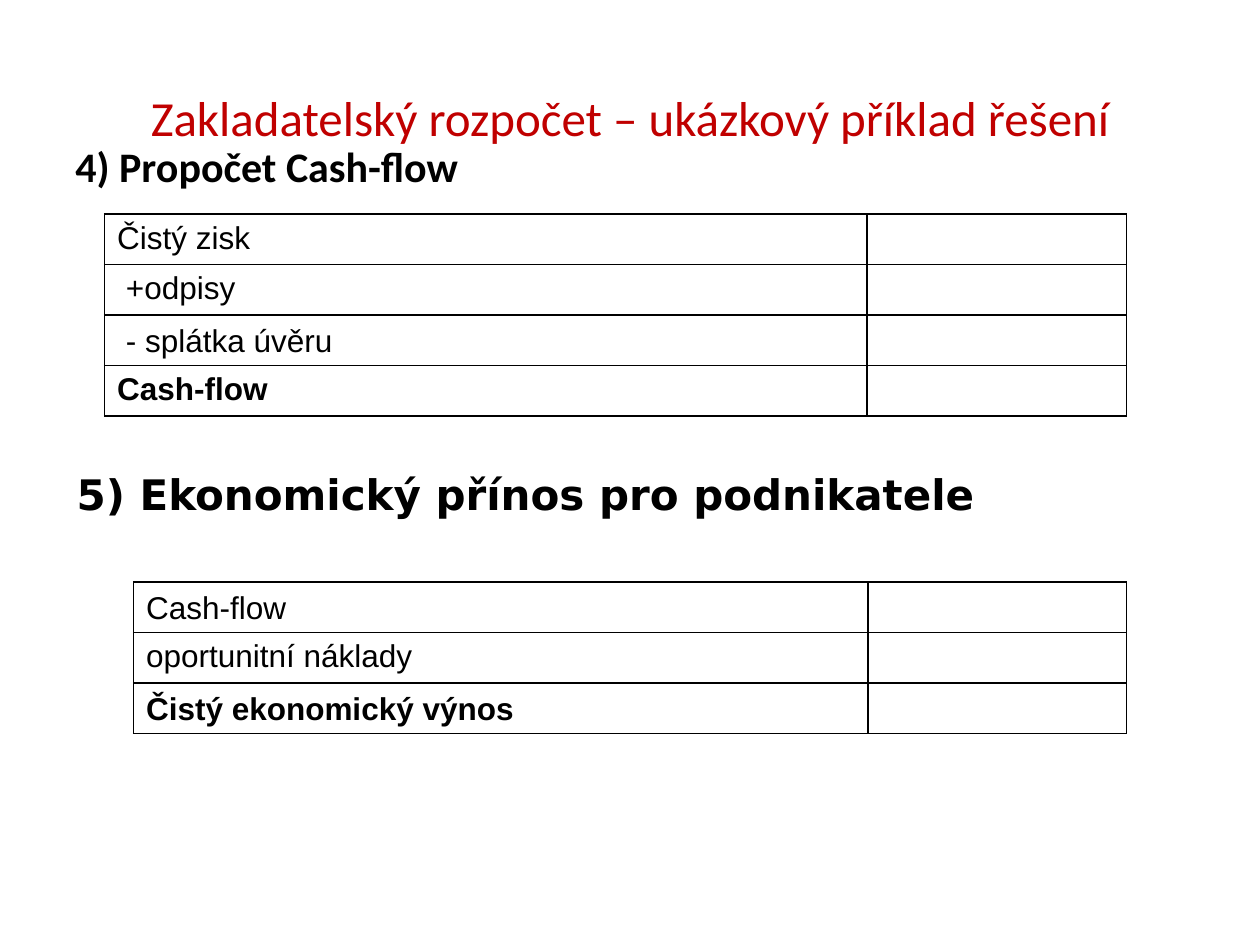
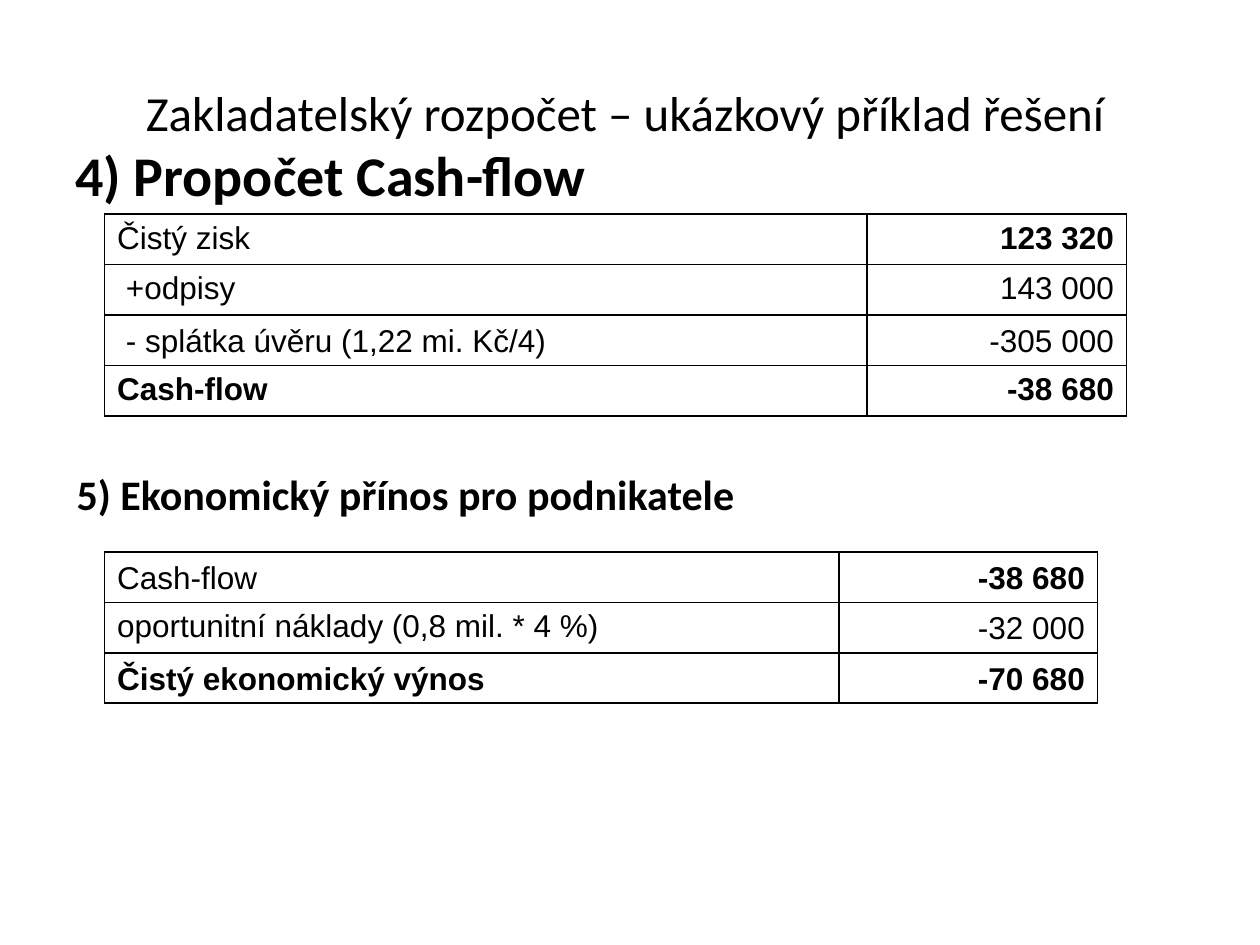
import pptx
import pptx.util
import pptx.dml.color
import pptx.enum.text
import pptx.oxml.ns
from lxml import etree

Inches = pptx.util.Inches
Align = pptx.enum.text.PP_ALIGN
Anchor = pptx.enum.text.MSO_ANCHOR

BLACK = "000000"
RED = "C00000"
ROW = 0.4
TITLE = "Zakladatelský rozpočet – ukázkový příklad řešení"
CASH = "4) Propočet Cash-flow"
GAIN = "5) Ekonomický přínos pro podnikatele"
CASH_COLS = (6.05, 2.06)
GAIN_COLS = (5.83, 2.05)
CASH_LOW = {(2, 0), (2, 1)}
GAIN_LOW = {(0, 0), (2, 0), (0, 1), (1, 1), (2, 1)}


def paint(code):
    return pptx.dml.color.RGBColor.from_string(code)


def put(frame, text, size=18, face="Arial", color=BLACK, bold=False, align=Align.LEFT):
    """Write one formatted paragraph into a text frame."""
    para = frame.paragraphs[0]
    para.alignment = align
    run = para.add_run()
    run.text = text
    run.font.size = pptx.util.Pt(size)
    run.font.name = face
    run.font.bold = bold
    run.font.color.rgb = paint(color)


def add_text(slide, box, text, anchor=Anchor.TOP, **style):
    frame = slide.shapes.add_textbox(*map(Inches, box)).text_frame
    frame.word_wrap = True
    frame.vertical_anchor = anchor
    put(frame, text, **style)


def add_title(slide, box, color):
    add_text(slide, box, TITLE, Anchor.MIDDLE, size=28, face="Calibri",
             color=color, align=Align.CENTER)


def add_heads(slide, size, face):
    """Add both section headings; size is for the first, face for the second."""
    add_text(slide, (0.5, 1.07, 4.53, 5.63), CASH, size=size, face="Calibri", bold=True)
    add_text(slide, (0.51, 3.67, 9.07, 0.71), GAIN, size=24, face=face, bold=True)


def frame_cell(cell):
    """Give a cell thin black borders and no fill."""
    props = cell._tc.get_or_add_tcPr()
    for side in ("lnL", "lnR", "lnT", "lnB"):
        line = etree.SubElement(props, pptx.oxml.ns.qn("a:" + side), w="12700")
        fill = etree.SubElement(line, pptx.oxml.ns.qn("a:solidFill"))
        etree.SubElement(fill, pptx.oxml.ns.qn("a:srgbClr"), val=BLACK)
    cell.fill.background()


def add_sums(slide, left, top, cols, rows, low):
    """Add a table of labels and sums; low lists the bottom-anchored cells."""
    table = slide.shapes.add_table(
        len(rows), len(cols), Inches(left), Inches(top),
        Inches(sum(cols)), Inches(ROW * len(rows))).table
    table.first_row = table.horz_banding = False
    for col, width in zip(table.columns, cols):
        col.width = Inches(width)
    last = len(rows) - 1
    for r, pair in enumerate(rows):
        table.rows[r].height = Inches(ROW)
        for c, text in enumerate(pair):
            cell = table.cell(r, c)
            frame_cell(cell)
            cell.vertical_anchor = Anchor.BOTTOM if (r, c) in low else Anchor.TOP
            if text.startswith(("+", "- ")):
                cell.margin_left = Inches(0.17)
            put(cell.text_frame, text, bold=r == last or (r == 0 and c == 1),
                align=Align.RIGHT if c else Align.LEFT)


def main():
    deck = pptx.Presentation()
    deck.slide_width, deck.slide_height = Inches(10), Inches(7.5)
    blank = deck.slide_layouts[6]

    task = deck.slides.add_slide(blank)
    add_title(task, (0.5, 0.3, 9, 1.25), RED)
    add_heads(task, 24, "DejaVu Sans")
    add_sums(task, 0.83, 1.7, CASH_COLS, [
        ("Čistý zisk", ""),
        ("+odpisy", ""),
        ("- splátka úvěru", ""),
        ("Cash-flow", ""),
    ], CASH_LOW)
    add_sums(task, 1.06, 4.62, GAIN_COLS, [
        ("Cash-flow", ""),
        ("oportunitní náklady", ""),
        ("Čistý ekonomický výnos", ""),
    ], GAIN_LOW)

    answer = deck.slides.add_slide(blank)
    add_title(answer, (0.42, 0.39, 9.08, 0.99), BLACK)
    add_heads(answer, 32, "Calibri")
    add_sums(answer, 0.83, 1.7, CASH_COLS, [
        ("Čistý zisk", "123 320"),
        ("+odpisy", "143 000"),
        ("- splátka úvěru (1,22 mi. Kč/4)", "-305 000"),
        ("Cash-flow", "-38 680"),
    ], CASH_LOW)
    add_sums(answer, 0.83, 4.38, GAIN_COLS, [
        ("Cash-flow", "-38 680"),
        ("oportunitní náklady (0,8 mil. * 4 %)", "-32 000"),
        ("Čistý ekonomický výnos", "-70 680"),
    ], GAIN_LOW)

    deck.save("out.pptx")


if __name__ == "__main__":
    main()
